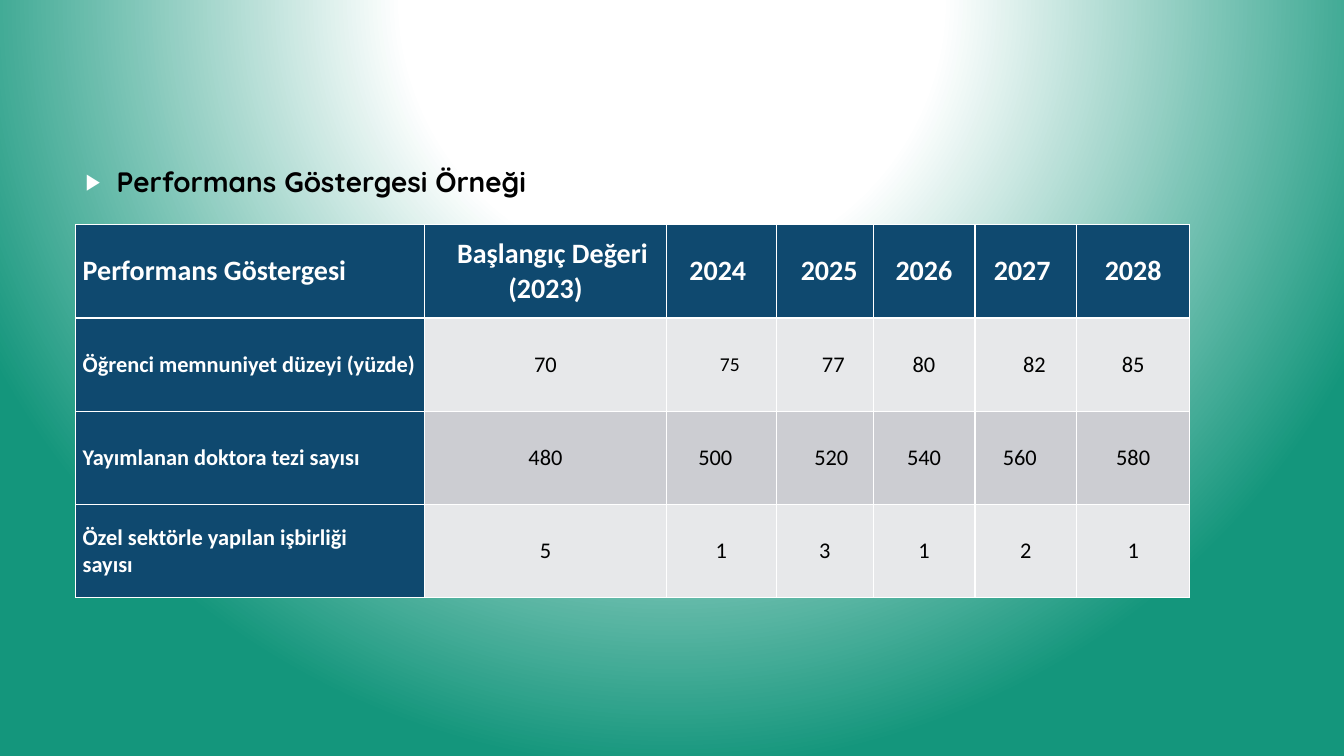
from pptx import Presentation
from pptx import oxml
from pptx import util as u
from pptx.dml.color import RGBColor
from pptx.enum import text
from pptx.oxml import ns

BLACK = RGBColor(0x00, 0x00, 0x00)
WHITE = RGBColor(0xFF, 0xFF, 0xFF)
NAVY = RGBColor(0x0F, 0x49, 0x6F)
LIGHT = RGBColor(0xE7, 0xE8, 0xEA)
GREY = RGBColor(0xCC, 0xCD, 0xD2)
GREEN = RGBColor(0x14, 0x96, 0x7C)


def insert_xml(parent, index, body):
    wrapper = oxml.parse_xml(f"<a:wrap {ns.nsdecls('a', 'p')}>{body}</a:wrap>")
    for offset, child in enumerate(list(wrapper)):
        parent.insert(index + offset, child)


def set_indent(p, left=0, first=0, right=0):
    pPr = p._p.get_or_add_pPr()
    for name, inches in (("marL", left), ("indent", first), ("marR", right)):
        pPr.set(name, str(u.Inches(inches)))


prs = Presentation()
prs.slide_width, prs.slide_height = u.Inches(13.33), u.Inches(7.5)
s = prs.slides.add_slide(prs.slide_layouts[6])

stops = "".join(
    f'<a:gs pos="{percent * 1000}"><a:srgbClr val="{color}"/></a:gs>'
    for percent, color in ((0, WHITE), (35, WHITE), (100, GREEN))
)
insert_xml(s._element.cSld, 0, f"""<p:bg><p:bgPr><a:gradFill rotWithShape="1">
<a:gsLst>{stops}</a:gsLst><a:path path="circle">
<a:fillToRect l="50000" t="-80000" r="50000" b="180000"/></a:path>
</a:gradFill><a:effectLst/></p:bgPr></p:bg>""")

sp = s.shapes.add_textbox(u.Inches(0.75), u.Inches(0.75), u.Inches(9.33), u.Inches(2.1))
tf = sp.text_frame
tf.word_wrap = True
tf.vertical_anchor = text.MSO_ANCHOR.MIDDLE
p = tf.paragraphs[0]
p.text = "Performans Göstergesi Örneği"
p.font.name, p.font.size, p.font.bold = "Quicksand", u.Pt(20), True
p.font.color.rgb = BLACK
p.space_before, p.space_after = u.Pt(4), u.Pt(6)
set_indent(p, left=0.31, first=-0.31)
after_spacing = 2
insert_xml(p._p.get_or_add_pPr(), after_spacing, f"""<a:buClr><a:srgbClr val="{WHITE}"/></a:buClr>
<a:buSzPct val="80000"/><a:buFont typeface="Calibri"/><a:buChar char="▶"/>""")

header = ["Performans Göstergesi", "Başlangıç Değeri (2023)", "2024", "2025", "2026", "2027", "2028"]
rows = [
    header,
    ["Öğrenci memnuniyet düzeyi (yüzde)", "70", "75", "77", "80", "82", "85"],
    ["Yayımlanan doktora tezi sayısı", "480", "500", "520", "540", "560", "580"],
    ["Özel sektörle yapılan işbirliği sayısı", "5", "1", "3", "1", "2", "1"],
]
HEADER_ROW, LAST_ROW = 0, len(rows) - 1
LABEL_COL, BASELINE_COL = 0, 1
LABEL_INDENT, LABEL_WRAP, BASELINE_FIRST_LINE = 0.07, 0.5, 0.14

widths = [3.46, 2.4, 1.09, 0.96, 1.01, 1.01, 1.12]
row_fills = [NAVY, LIGHT, GREY, LIGHT]
row_space_before = [10.4, 3, 3, 10.2]
row_nudges = [
    {"2024": -0.07, "2025": 0.09, "2027": -0.07},
    {"2024": 0.17, "2025": 0.17, "2027": 0.17},
    {"2024": -0.12, "2025": 0.13, "2027": -0.12},
    {},
]
small_cells = {"75"}

tbl = s.shapes.add_table(
    len(rows), len(widths), u.Inches(0.75), u.Inches(2.23), u.Inches(sum(widths)), u.Inches(3.7)
).table
tbl.first_row = tbl.horz_banding = False
for col, width in zip(tbl.columns, widths):
    col.width = u.Inches(width)

borders = "".join(
    f'<a:{side} w="{u.Pt(1)}"><a:solidFill><a:srgbClr val="{WHITE}"/></a:solidFill></a:{side}>'
    for side in ("lnL", "lnR", "lnT", "lnB")
)

for i, row in enumerate(rows):
    for j, value in enumerate(row):
        cell = tbl.cell(i, j)
        is_label = j == LABEL_COL
        is_heading = is_label or i == HEADER_ROW
        cell.margin_left = cell.margin_right = cell.margin_top = cell.margin_bottom = 0
        cell.vertical_anchor = text.MSO_ANCHOR.MIDDLE
        cell.fill.solid()
        cell.fill.fore_color.rgb = NAVY if is_label else row_fills[i]
        insert_xml(cell._tc.get_or_add_tcPr(), 0, borders)

        p = cell.text_frame.paragraphs[0]
        p.text = value
        p.font.name, p.font.bold = "Calibri", is_heading
        p.font.size = u.Pt(20 if i == HEADER_ROW else 14 if value in small_cells else 16)
        p.font.color.rgb = WHITE if is_heading else BLACK
        p.space_before = u.Pt(3 if is_label and i != HEADER_ROW else row_space_before[i])
        if is_label:
            p.alignment = text.PP_ALIGN.LEFT
            set_indent(p, left=LABEL_INDENT, right=LABEL_WRAP if i == LAST_ROW else 0)
        else:
            p.alignment = text.PP_ALIGN.CENTER
            nudge = row_nudges[i].get(header[j], 0)
            first = BASELINE_FIRST_LINE if (i, j) == (HEADER_ROW, BASELINE_COL) else 0
            set_indent(p, left=max(nudge, 0), first=first, right=max(-nudge, 0))

prs.save("out.pptx")
